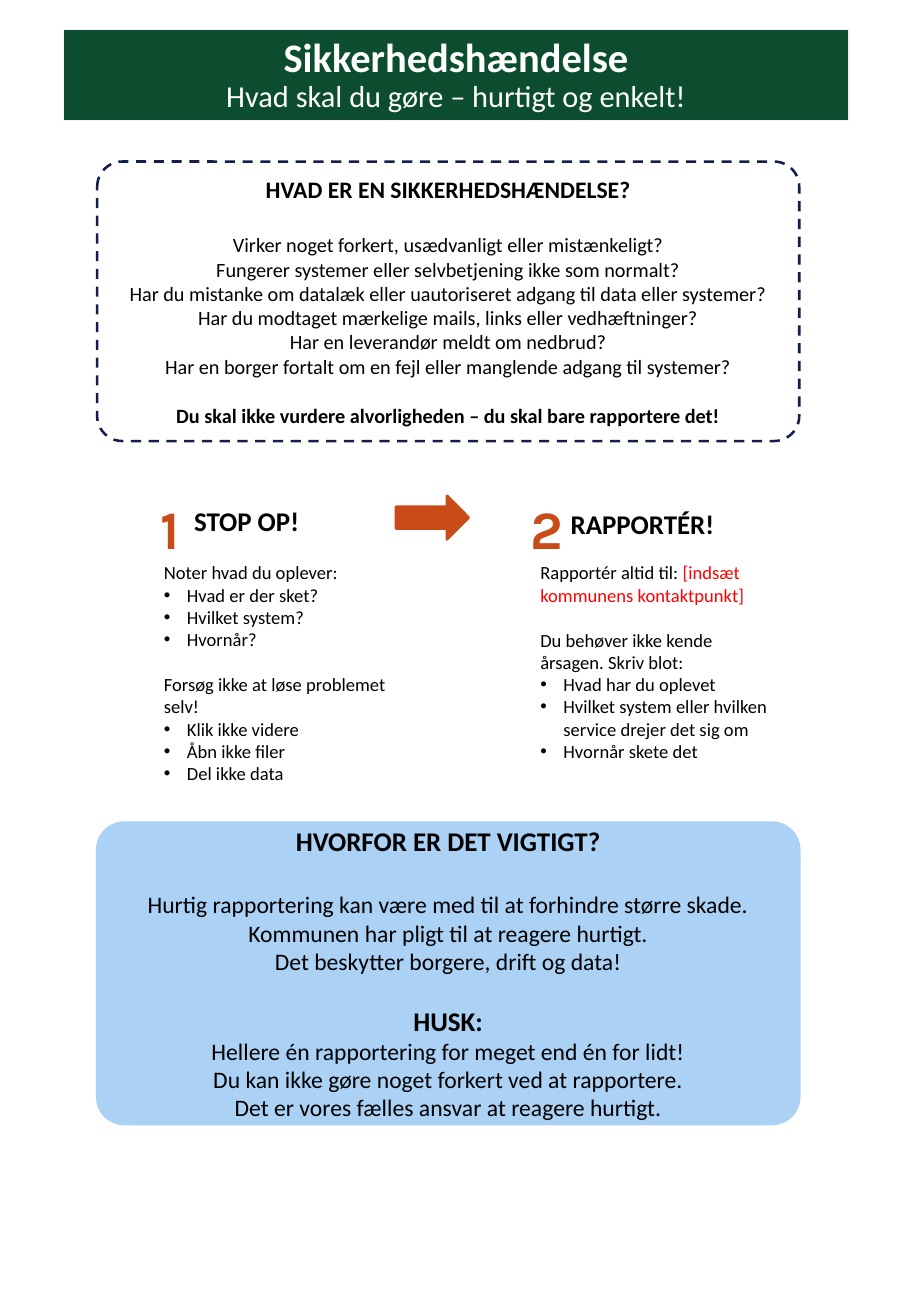
from lxml import etree
from pptx import Presentation
from pptx import util as u
from pptx.dml.color import RGBColor
from pptx.enum import dml, shapes, text
from pptx.oxml.ns import qn

# The grid has square cells of a tenth of an inch.
CELL = u.Inches(0.1)
COLUMNS, ROWS = 75, 108.3
PANEL_LEFT, PANEL_WIDTH = 8, 57.8
STEP_ROW = 40.8
BULLET_INDENT = u.Inches(0.19)
LINE_HEIGHT = 1.22  # of the font size

GREEN = RGBColor(0x0C, 0x4D, 0x2F)
NAVY = RGBColor(0x14, 0x1E, 0x4D)
ORANGE = RGBColor(0xC9, 0x4B, 0x17)
BLUE = RGBColor(0xAB, 0xD1, 0xF5)
PALE_GREY = RGBColor(0xF2, 0xF2, 0xF2)
RED = RGBColor(0xFF, 0x00, 0x00)
BLACK = RGBColor(0x00, 0x00, 0x00)
WHITE = RGBColor(0xFF, 0xFF, 0xFF)


def grid_box(column, row, columns, rows):
    return [round(cells * CELL) for cells in (column, row, columns, rows)]


def add_paragraph(shape, content, *, size, font="Calibri", colour=BLACK, bold=False,
                  align=text.PP_ALIGN.LEFT, bullet=False, gap=0, spacing=None,
                  accent="", accent_colour=RED):
    """Append a paragraph; gap is the space before it in lines of its own size."""
    frame = shape.text_frame
    paragraph = frame.paragraphs[0]
    if paragraph.runs:
        paragraph = frame.add_paragraph()
    if bullet:
        properties = paragraph._p.get_or_add_pPr()
        properties.set("marL", str(BULLET_INDENT))
        properties.set("indent", str(-BULLET_INDENT))
        etree.SubElement(properties, qn("a:buFont")).set("typeface", "Arial")
        etree.SubElement(properties, qn("a:buChar")).set("char", "•")
    paragraph.alignment = align
    if gap:
        paragraph.space_before = u.Pt(round(gap * size * LINE_HEIGHT, 1))
    if spacing:
        paragraph.line_spacing = spacing
    for words, run_colour in ((content, colour), (accent, accent_colour)):
        if words:
            run = paragraph.add_run()
            run.text = words
            run.font.name = font
            run.font.size = u.Pt(size)
            run.font.bold = bold
            run.font.color.rgb = run_colour


def add_block(slide, kind, box, *, line, line_width=1.5, fill=None, dashed=False,
              anchor=text.MSO_ANCHOR.MIDDLE):
    shape = slide.shapes.add_shape(kind, *grid_box(*box))
    shape.shadow.inherit = False
    if fill is None:
        shape.fill.background()
    else:
        shape.fill.solid()
        shape.fill.fore_color.rgb = fill
    shape.line.color.rgb = line
    shape.line.width = u.Pt(line_width)
    if dashed:
        shape.line.dash_style = dml.MSO_LINE.DASH
    shape.text_frame.word_wrap = True
    shape.text_frame.vertical_anchor = anchor
    return shape


def add_text_box(slide, box, anchor=text.MSO_ANCHOR.MIDDLE):
    shape = slide.shapes.add_textbox(*grid_box(*box))
    shape.text_frame.word_wrap = True
    shape.text_frame.vertical_anchor = anchor
    return shape


def add_banner(slide, title, subtitle):
    banner = add_block(slide, shapes.MSO_SHAPE.RECTANGLE, (5.2, 2.4, 64.7, 7.5),
                       fill=GREEN, line=PALE_GREY, line_width=0.75,
                       anchor=text.MSO_ANCHOR.BOTTOM)
    for content, size, bold in ((title, 24, True), (subtitle, 18, False)):
        add_paragraph(banner, content, size=size, bold=bold, colour=WHITE,
                      align=text.PP_ALIGN.CENTER, spacing=0.9)


def add_panel(slide, row, rows, paragraphs, *, size, **block_format):
    """Add a rounded panel; each paragraph is its text and what differs from plain."""
    panel = add_block(slide, shapes.MSO_SHAPE.ROUNDED_RECTANGLE,
                      (PANEL_LEFT, row, PANEL_WIDTH, rows), **block_format)
    panel.adjustments[0] = 0.09
    for content, changes in paragraphs:
        add_paragraph(panel, content, align=text.PP_ALIGN.CENTER,
                      **{"size": size, **changes})


def add_step(slide, column, number, heading, paragraphs, heading_drop=0):
    number_box = add_text_box(slide, (column, STEP_ROW, 6, 5.3))
    add_paragraph(number_box, number, size=32, font="Karla", colour=ORANGE, bold=True,
                  align=text.PP_ALIGN.CENTER)
    heading_box = add_text_box(slide, (column + 4, STEP_ROW + heading_drop, 15.4, 4.1))
    add_paragraph(heading_box, heading, size=16, bold=True)
    body = add_text_box(slide, (column + 1.5, STEP_ROW + 4.9, 20.8, 18.2),
                        anchor=text.MSO_ANCHOR.TOP)
    for content, changes in paragraphs:
        add_paragraph(body, content, size=11, **changes)


def main():
    presentation = Presentation()
    presentation.slide_width = COLUMNS * CELL
    presentation.slide_height = round(ROWS * CELL)
    slide = presentation.slides.add_slide(presentation.slide_layouts[6])
    bullet, plain = {"bullet": True}, {}

    add_banner(slide, "Sikkerhedshændelse", "Hvad skal du gøre – hurtigt og enkelt!")

    add_panel(slide, 13.3, 23, [
        ("HVAD ER EN SIKKERHEDSHÆNDELSE?", {"size": 14, "bold": True}),
        ("Virker noget forkert, usædvanligt eller mistænkeligt?", {"gap": 14 / 12}),
        ("Fungerer systemer eller selvbetjening ikke som normalt?", plain),
        ("Har du mistanke om datalæk eller uautoriseret adgang til data eller systemer?",
         plain),
        ("Har du modtaget mærkelige mails, links eller vedhæftninger?", plain),
        ("Har en leverandør meldt om nedbrud?", plain),
        ("Har en borger fortalt om en fejl eller manglende adgang til systemer?", plain),
        ("Du skal ikke vurdere alvorligheden – du skal bare rapportere det!",
         {"bold": True, "gap": 1}),
    ], size=12, line=NAVY, dashed=True)

    add_step(slide, 11, "1", "STOP OP!", [
        ("Noter hvad du oplever:", plain),
        ("Hvad er der sket?", bullet),
        ("Hvilket system?", bullet),
        ("Hvornår?", bullet),
        ("Forsøg ikke at løse problemet selv!", {"gap": 1}),
        ("Klik ikke videre", bullet),
        ("Åbn ikke filer", bullet),
        ("Del ikke data", bullet),
    ])
    add_block(slide, shapes.MSO_SHAPE.RIGHT_ARROW, (32.6, STEP_ROW, 6, 3.6),
              fill=ORANGE, line=ORANGE)
    add_step(slide, 42, "2", "RAPPORTÉR!", [
        ("Rapportér altid til: ", {"accent": "[indsæt kommunens kontaktpunkt]"}),
        ("Du behøver ikke kende årsagen. Skriv blot:", {"gap": 1}),
        ("Hvad har du oplevet", bullet),
        ("Hvilket system eller hvilken service drejer det sig om", bullet),
        ("Hvornår skete det", bullet),
    ], heading_drop=0.25)

    add_panel(slide, 67.7, 24.8, [
        ("HVORFOR ER DET VIGTIGT?", {"size": 16, "bold": True}),
        ("Hurtig rapportering kan være med til at forhindre større skade.",
         {"gap": 16 / 14}),
        ("Kommunen har pligt til at reagere hurtigt.", plain),
        ("Det beskytter borgere, drift og data!", plain),
        ("HUSK:", {"size": 16, "bold": True, "gap": 14 / 16}),
        ("Hellere én rapportering for meget end én for lidt!", plain),
        ("Du kan ikke gøre noget forkert ved at rapportere.", plain),
        ("Det er vores fælles ansvar at reagere hurtigt.", plain),
    ], size=14, fill=BLUE, line=BLUE)

    presentation.save("out.pptx")


if __name__ == "__main__":
    main()
